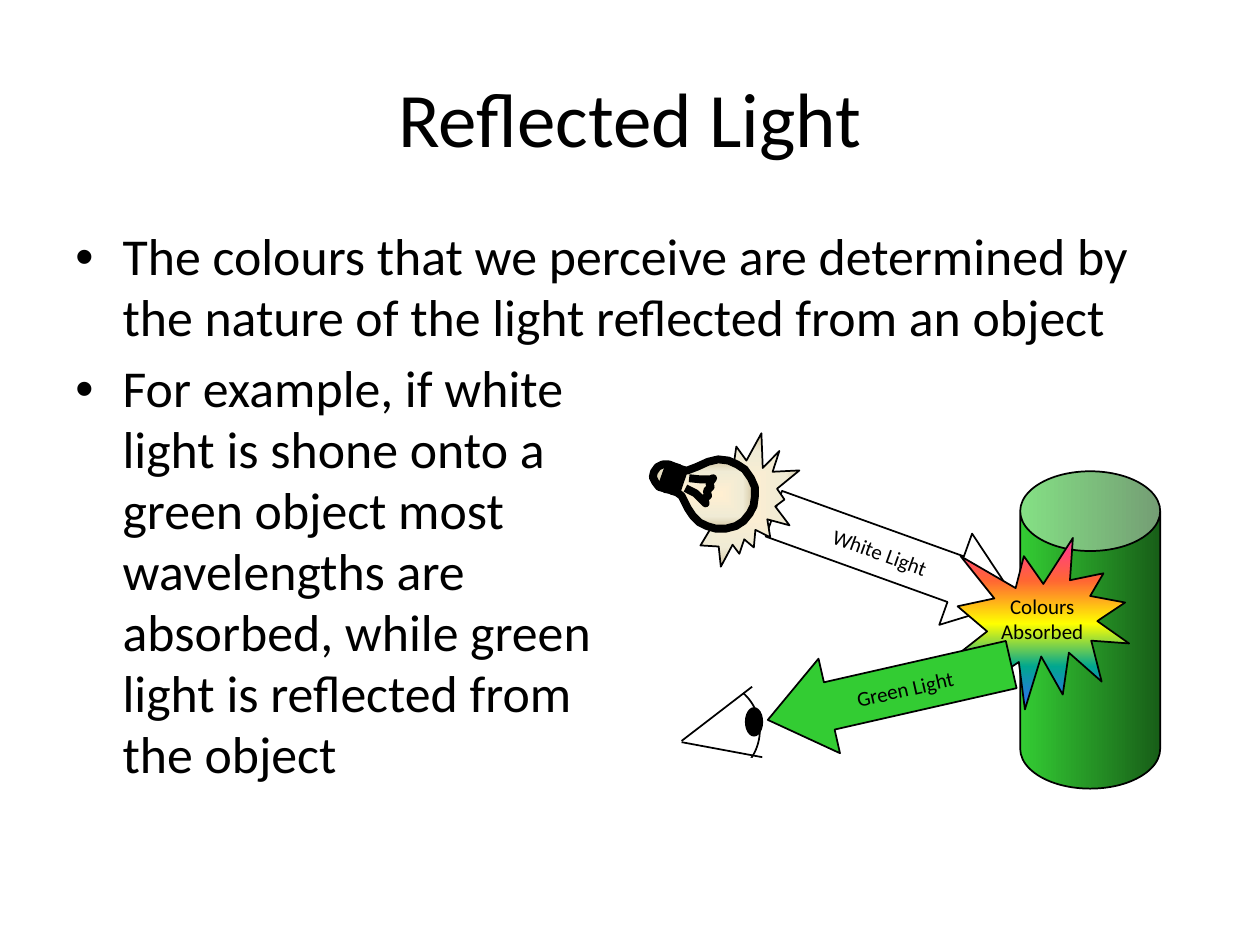
from lxml.etree import SubElement
from pptx import Presentation
from pptx.dml.color import RGBColor
from pptx.enum.shapes import MSO_CONNECTOR, MSO_SHAPE
from pptx.enum.text import MSO_ANCHOR, PP_ALIGN
from pptx.oxml.ns import qn
from pptx.util import Pt

INK = {"black": "000000", "white": "FFFFFF", "green": "33CC33", "dark": "185E18",
       "pink": "FF3399", "orange": "FF6633", "yellow": "FFFF00", "teal": "01A78F",
       "blue": "3366FF", "cream": "FFEFD1", "ivory": "F0EBD5", "sand": "D1C39F"}
GLOW = [(0, "cream"), (65, "ivory"), (100, "sand")]
POINTS = [
    "The colours that we perceive are determined by the nature of the light "
    "reflected from an object",
    "For example, if white \vlight is shone onto a \vgreen object most \v"
    "wavelengths are \vabsorbed, while green \vlight is reflected from \vthe object",
]
GLASS = [
    (1.7, 21.3), (1, 24.2), (2.4, 27), (4.6, 29.9), (7.4, 30.6), (14.6, 32.8),
    (17.5, 35), (21.1, 42.2), (24, 46.5), (27.6, 50.1), (31.9, 52.2), (37, 53.7),
    (42.7, 53.7), (48.5, 52.2), (52.8, 49.4), (56.4, 45), (58.6, 40.7),
    (59.3, 35.7), (59.3, 29.9), (57.1, 24.9), (53.5, 19.8), (49.2, 17),
    (44.2, 14.8), (38.4, 14.1), (32.6, 15.5), (26.2, 18.4), (20.4, 20.6),
    (17.5, 19.8), (10.3, 17), (6.7, 17), (3.8, 18.4)]
COIL = [
    (21.8, 24.9), (28.3, 25.6), (34.1, 25.6), (35.5, 24.9), (33.4, 27.8),
    (34.1, 29.9), (31.9, 32.1), (32.6, 35), (30.5, 36.4), (31.2, 39.3),
    (25.4, 33.5), (19.7, 30.6)]
BASE = [
    (19, 19.8), (14.6, 32.8), (11.8, 32.1), (16.1, 19.1), (13.2, 18.4),
    (8.9, 31.4), (6, 29.9), (10.3, 17.7)]


def rgb(name):
    return RGBColor.from_string(INK[name])


def blend(shape, stops, angle=0, path=None):
    shape.fill.gradient()
    grad = shape.element.spPr.find(qn("a:gradFill"))
    grad.clear()
    grad.set("rotWithShape", "1")
    items = SubElement(grad, qn("a:gsLst"))
    for pos, name in stops:
        stop = SubElement(items, qn("a:gs"), pos=str(pos * 1000))
        SubElement(stop, qn("a:srgbClr"), val=INK[name])
    if path:
        mode = SubElement(grad, qn("a:path"), path=path)
        SubElement(mode, qn("a:fillToRect"), l="50000", t="50000", r="50000", b="50000")
    else:
        SubElement(grad, qn("a:lin"), ang=str(angle * 60000), scaled="1")


def paint(shape, fill=None, line="black", width=1):
    shape.shadow.inherit = False
    if fill:
        shape.fill.solid()
        shape.fill.fore_color.rgb = rgb(fill)
    else:
        shape.fill.background()
    if line:
        shape.line.color.rgb = rgb(line)
        shape.line.width = Pt(width)
    else:
        shape.line.fill.background()


def add(slide, kind, box, fill=None, line="black", turn=0, adjust=()):
    shape = slide.shapes.add_shape(kind, *map(Pt, box))
    paint(shape, fill, line)
    shape.rotation = turn
    for i, value in enumerate(adjust):
        shape.adjustments[i] = value
    return shape


def style(para, size):
    for run in para.runs:
        run.font.name = "Calibri"
        run.font.size = Pt(size)
        run.font.color.rgb = rgb("black")


def label(shape, text, wrap=False):
    frame = shape.text_frame
    frame.text = text
    frame.word_wrap = wrap
    frame.vertical_anchor = MSO_ANCHOR.MIDDLE
    para = frame.paragraphs[0]
    para.alignment = PP_ALIGN.CENTER
    style(para, 12)


def trace(slide, box, *runs, close=False):
    x, y = box[:2]
    spots = [[(Pt(x + a), Pt(y + b)) for a, b in run] for run in runs]
    pen = slide.shapes.build_freeform(*spots[0][0], scale=1.0)
    for i, run in enumerate(spots):
        if i:
            pen.move_to(*run[0])
        pen.add_line_segments(run[1:], close=close)
    shape = pen.convert_to_shape()
    paint(shape, width=4.5)
    return shape


def put_title(slide, box):
    title = slide.shapes.title
    title.left, title.top, title.width, title.height = map(Pt, box)
    frame = title.text_frame
    frame.text = "Reflected Light"
    frame.vertical_anchor = MSO_ANCHOR.MIDDLE
    frame.paragraphs[0].alignment = PP_ALIGN.CENTER
    style(frame.paragraphs[0], 44)


def put_body(slide, box):
    frame = slide.shapes.add_textbox(*map(Pt, box)).text_frame
    frame.word_wrap = True
    for i, text in enumerate(POINTS):
        para = frame.add_paragraph() if i else frame.paragraphs[0]
        para.text = text
        para.space_before = Pt(6)
        para.line_spacing = 0.98
        style(para, 29.6)
        props = para._p.get_or_add_pPr()
        props.set("marL", str(Pt(27)))
        props.set("indent", str(Pt(-27)))
        SubElement(props, qn("a:buFont"), typeface="Arial")
        SubElement(props, qn("a:buChar"), char="•")


def put_beams(slide, box):
    x, y, w, h = box
    can = add(slide, MSO_SHAPE.CAN, (x + w - 80, y, 80, h), adjust=[0.57])
    blend(can, [(0, "green"), (100, "dark")])
    beam = add(slide, MSO_SHAPE.RIGHT_ARROW, (x + 0.8, y + 21.6, 147.6, 55.4),
               "white", turn=19.8, adjust=[0.5, 0.67])
    label(beam, "White Light")
    burst = add(slide, MSO_SHAPE.EXPLOSION1, (x + 110.2, y + 38.1, 98, 98))
    blend(burst, [(0, "pink"), (25, "orange"), (50, "yellow"),
                  (75, "teal"), (100, "blue")], angle=90)
    label(burst, "Colours Absorbed", wrap=True)
    frame = burst.text_frame
    frame.margin_left = frame.margin_right = frame.margin_top = frame.margin_bottom = 0
    back = add(slide, MSO_SHAPE.LEFT_ARROW, (x, y + 98.6, 142.6, 55.4),
               "green", turn=347.2, adjust=[0.5, 0.65])
    label(back, "Green Light")


def put_lamp(slide, box):
    x, y, w, h = box
    flare = add(slide, MSO_SHAPE.EXPLOSION2, (x + w - 63.4, y, 63.4, h), turn=355.6)
    blend(flare, GLOW, path="shape")
    bulb = trace(slide, box, GLASS, close=True)
    blend(bulb, GLOW, path="rect")
    trace(slide, box, COIL, BASE)


def put_eye(slide, box):
    x, y, w, h = box
    add(slide, MSO_SHAPE.OVAL, (x + 23.3, y + 9.8, 56.9, 56.9))
    for left, top, turn in [(0.2, 48.7, 10.5), (4.6, 0.4, 323.8)]:
        add(slide, MSO_SHAPE.RECTANGLE, (x + left, y + top, 89.3, 28.8),
            "white", None, turn)
    for start, right, end in [(44.4, 75.8, 13.4), (45.1, 81.6, 53.7)]:
        lid = slide.shapes.add_connector(
            MSO_CONNECTOR.STRAIGHT, Pt(x + 35.5), Pt(y + start), Pt(x + right), Pt(y + end))
        lid.line.color.rgb = rgb("black")
        lid.line.width = Pt(1)
        SubElement(lid.element.spPr, qn("a:effectLst"))
    add(slide, MSO_SHAPE.OVAL, (x + 72.2, y + 25.6, 9.4, 15.8), "black")


def main():
    deck = Presentation()
    deck.slide_width, deck.slide_height = Pt(720), Pt(540)
    slide = deck.slides.add_slide(deck.slide_layouts[5])
    put_title(slide, (36, 21.6, 648, 90))
    put_body(slide, (36, 126, 648, 356.4))
    put_beams(slide, (437, 269.3, 226, 181.4))
    put_lamp(slide, (372, 248.4, 86, 74.2))
    put_eye(slide, (354, 379, 94, 78))
    deck.save("out.pptx")


if __name__ == "__main__":
    main()
